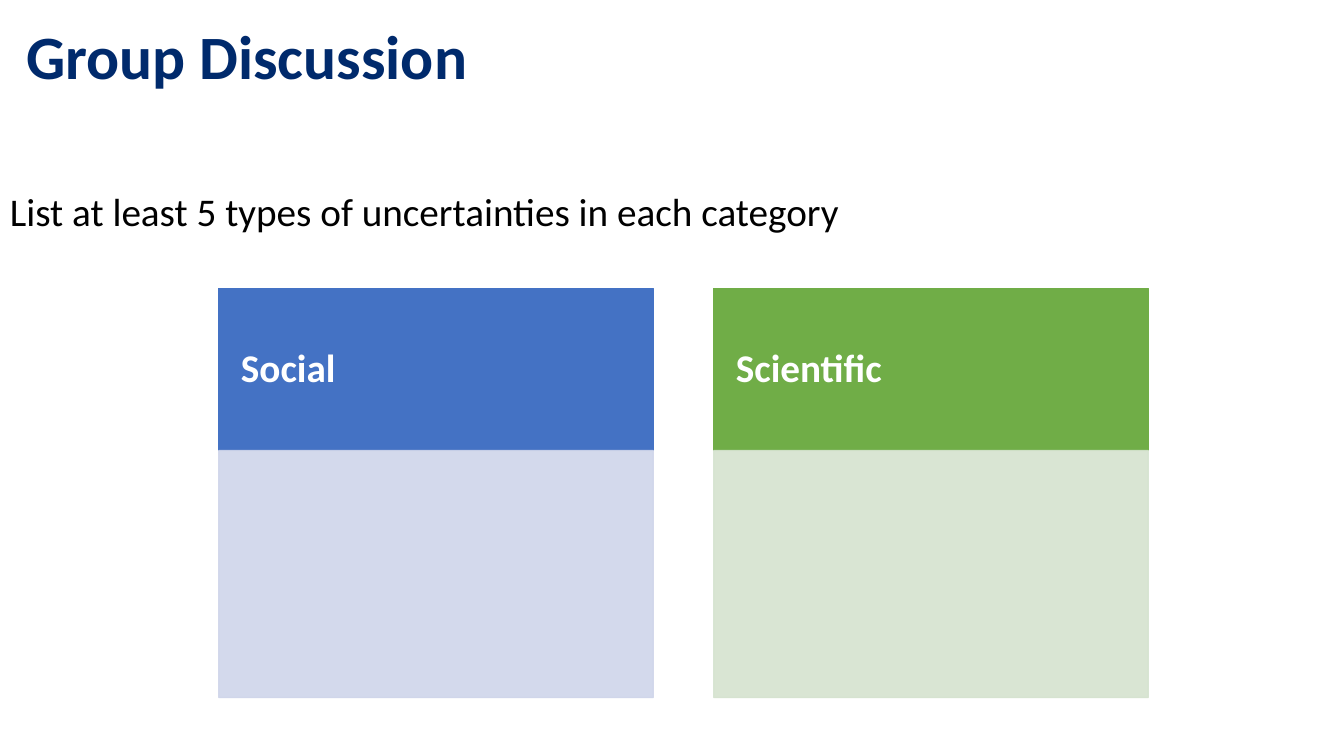
from dataclasses import dataclass

from lxml.etree import SubElement
from pptx import Presentation
from pptx.dml.color import RGBColor
from pptx.enum.shapes import MSO_SHAPE
from pptx.enum.text import MSO_ANCHOR, PP_ALIGN
from pptx.oxml.ns import qn
from pptx.shapes.autoshape import Shape
from pptx.slide import Slide
from pptx.util import Inches, Pt

WIDE, HIGH = Inches(13.33), Inches(7.5)


@dataclass(frozen=True)
class Theme:
    font: str = "Calibri"
    navy: str = "002A6C"
    black: str = "000000"
    white: str = "FFFFFF"
    blue: str = "4472C4"
    pale_blue: str = "CFD5EA"
    green: str = "70AD47"
    pale_green: str = "D5E3CF"
    title: int = 44
    body: int = 28


@dataclass(frozen=True)
class Box:
    """Left, top, width and height in percent of the slide."""
    left: float
    top: float
    width: float
    height: float

    def place(self) -> tuple[int, int, int, int]:
        return (int(WIDE * self.left / 100), int(HIGH * self.top / 100),
                int(WIDE * self.width / 100), int(HIGH * self.height / 100))


@dataclass(frozen=True)
class Topic:
    name: str
    color: str
    pale: str


THEME = Theme()
TOPICS = [
    Topic("Social", THEME.blue, THEME.pale_blue),
    Topic("Scientific", THEME.green, THEME.pale_green),
]

# Column grid, in percent of the slide
LEFT, STEP, WIDTH = 16.28, 36.83, 32.33
TOP, HEAD, BODY = 38.13, 21.47, 32.67


def write(shape: Shape, text: str, size: int, color: str,
          bold: bool = False, anchor: MSO_ANCHOR = MSO_ANCHOR.MIDDLE) -> None:
    frame = shape.text_frame
    frame.word_wrap = True
    frame.vertical_anchor = anchor
    para = frame.paragraphs[0]
    para.text = text
    para.alignment = PP_ALIGN.LEFT
    para.line_spacing = 0.9
    para.font.name = THEME.font
    para.font.size = Pt(size)
    para.font.bold = bold
    para.font.color.rgb = RGBColor.from_string(color)


def add_panel(slide: Slide, box: Box, color: str, alpha: int = 100) -> Shape:
    panel = slide.shapes.add_shape(MSO_SHAPE.RECTANGLE, *box.place())
    panel.shadow.inherit = False
    panel.fill.solid()
    panel.fill.fore_color.rgb = RGBColor.from_string(color)
    panel.line.color.rgb = RGBColor.from_string(color)
    panel.line.width = Pt(1)
    if alpha < 100:
        # Applies to both the fill and the outline
        for tint in panel.element.spPr.iter(qn("a:srgbClr")):
            SubElement(tint, qn("a:alpha")).set("val", str(alpha * 1000))
    return panel


def add_topic(slide: Slide, topic: Topic, col: int) -> None:
    left = LEFT + col * STEP
    head = add_panel(slide, Box(left, TOP, WIDTH, HEAD), topic.color)
    write(head, topic.name, THEME.body, THEME.white, bold=True)
    frame = head.text_frame
    frame.margin_left = frame.margin_right = Inches(0.22)
    frame.margin_top = frame.margin_bottom = Inches(0.12)
    add_panel(slide, Box(left, TOP + HEAD, WIDTH, BODY), topic.pale, alpha=90)


def main() -> None:
    deck = Presentation()
    deck.slide_width, deck.slide_height = WIDE, HIGH
    slide = deck.slides.add_slide(deck.slide_layouts[6])

    # Title and task
    title = slide.shapes.add_textbox(*Box(1.2, 0, 97.45, 15.73).place())
    write(title, "Group Discussion", THEME.title, THEME.navy, bold=True)
    task = slide.shapes.add_textbox(*Box(0, 24.8, 67.52, 66).place())
    write(task, "List at least 5 types of uncertainties in each category",
          THEME.body, THEME.black, anchor=MSO_ANCHOR.TOP)

    # Two topic columns
    for col, topic in enumerate(TOPICS):
        add_topic(slide, topic, col)

    deck.save("out.pptx")


if __name__ == "__main__":
    main()
